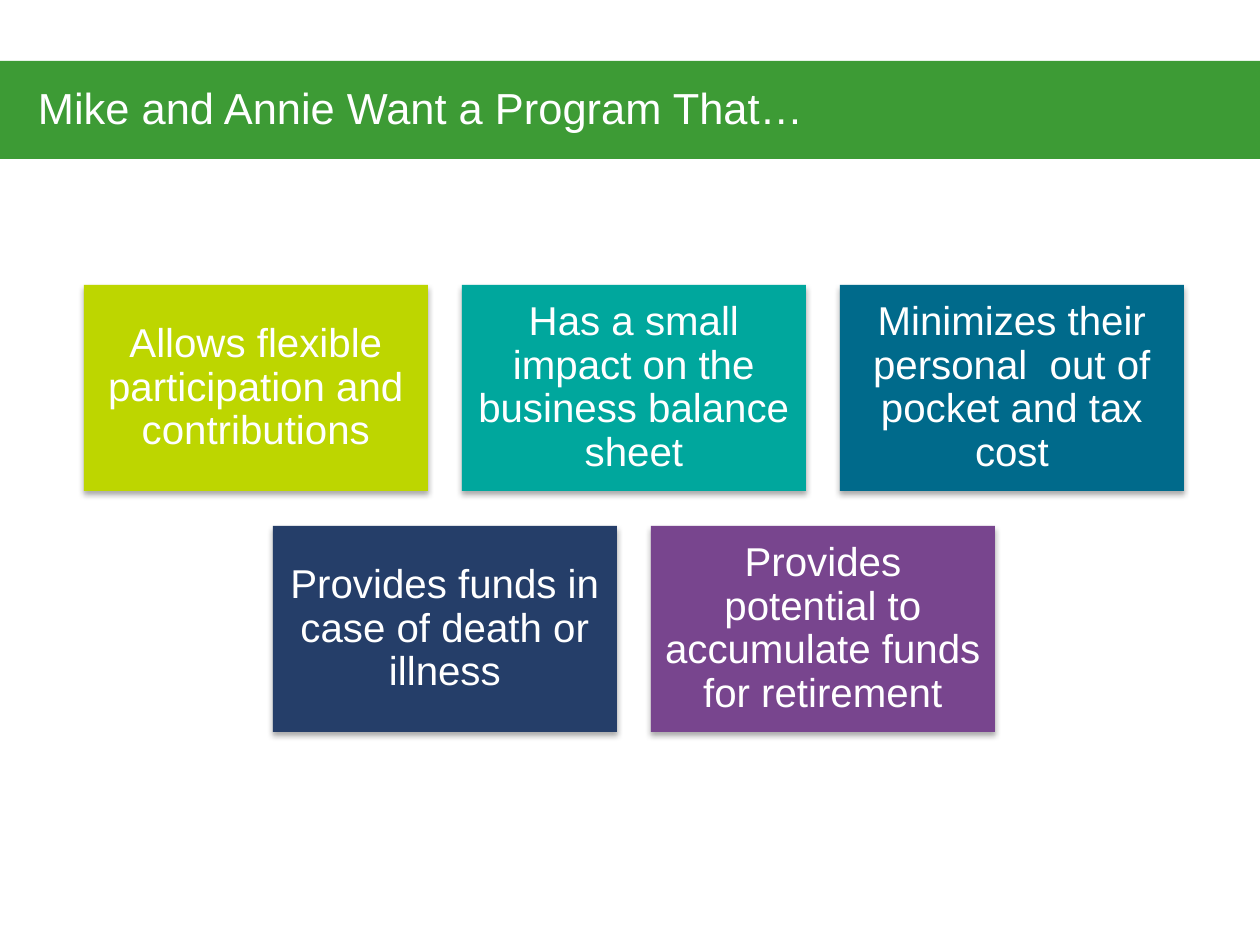
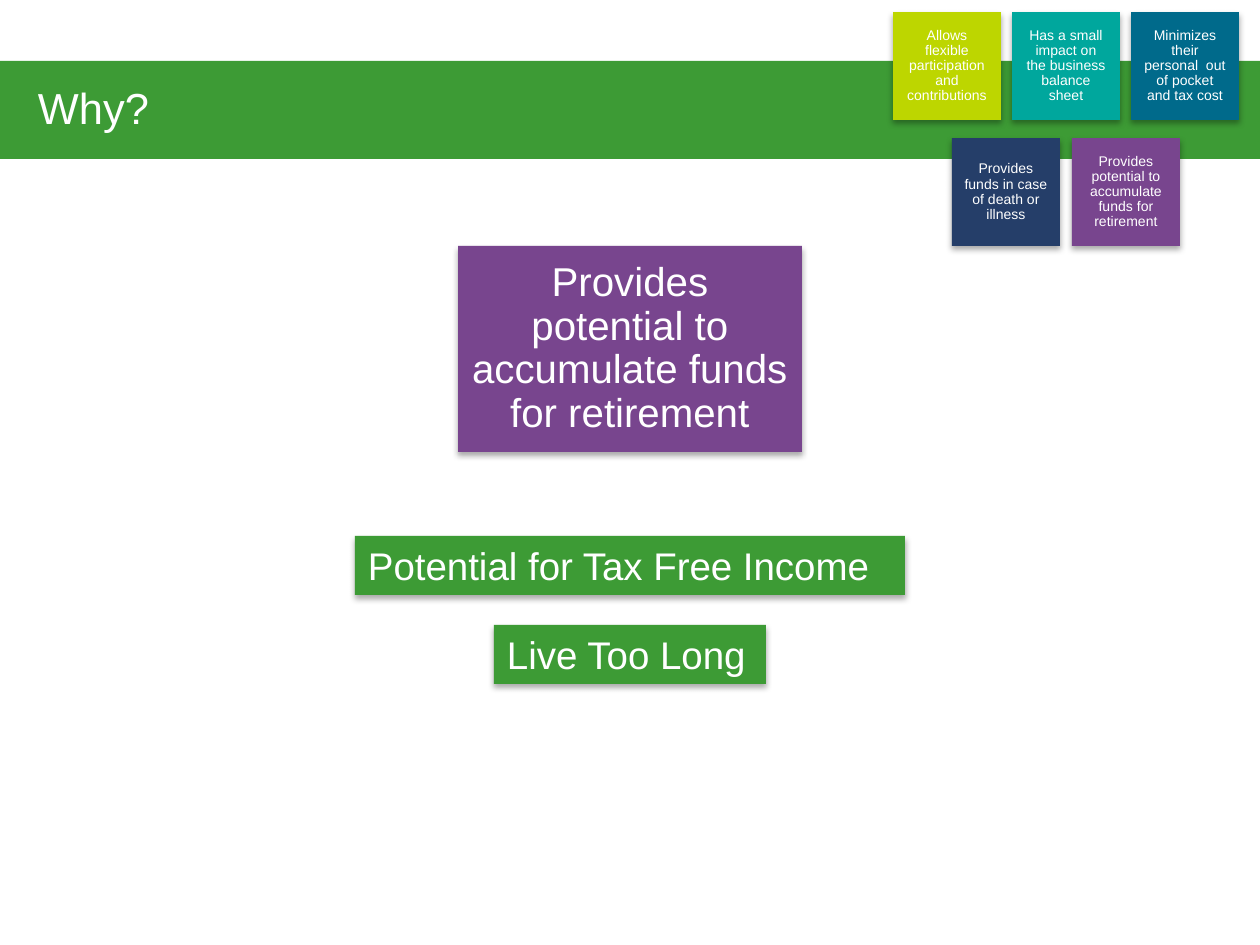
"""Build two slides on what Mike and Annie want from a program."""
from typing import Any, NamedTuple

from lxml.etree import SubElement
from pptx import Presentation
from pptx.dml.color import RGBColor
from pptx.enum.shapes import MSO_SHAPE
from pptx.enum.text import MSO_ANCHOR, PP_ALIGN
from pptx.oxml.ns import qn
from pptx.slide import Slide
from pptx.util import Emu, Pt

SCALE = 914400 / 126
WIDTH, HEIGHT = 1260, 945
FONT = "Arial"
WHITE, GREEN, BLACK = "FFFFFF", "3D9B35", "000000"


class Box(NamedTuple):
    left: int
    top: int
    width: int
    height: int


class Style(NamedTuple):
    size: float
    align: PP_ALIGN
    anchor: MSO_ANCHOR
    inset: tuple[int, int]
    line: float
    shadow: bool


class Card(NamedTuple):
    text: str
    fill: str


class Grid(NamedTuple):
    first: Box
    across: int
    down: int
    style: Style


TITLE = Style(24.8, PP_ALIGN.LEFT, MSO_ANCHOR.BOTTOM, (38, 25), 0.9, False)
LARGE = Style(23, PP_ALIGN.CENTER, MSO_ANCHOR.MIDDLE, (12, 12), 0.9, True)
SMALL = LARGE._replace(size=8)
LABEL = Style(22, PP_ALIGN.LEFT, MSO_ANCHOR.TOP, (13, 6), 1.0, True)

CARDS = [
    Card("Allows flexible participation and contributions", "BDD600"),
    Card("Has a small impact on the business balance sheet", "00A79D"),
    Card("Minimizes their personal  out of pocket and tax cost", "006A8B"),
    Card("Provides funds in case of death or illness", "253E69"),
    Card("Provides potential to accumulate funds for retirement", "78458E"),
]
COLS = 3
WANTS = Grid(Box(84, 285, 344, 206), 378, 241, LARGE)
RECAP = Grid(Box(893, 12, 108, 108), 119, 126, SMALL)
LABELS = {
    "Potential for Tax Free Income": Box(355, 536, 550, 59),
    "Live Too Long": Box(494, 625, 272, 59),
}


def px(value: float) -> Emu:
    """Turn pixels into EMU."""
    return Emu(round(value * SCALE))


def color(code: str) -> RGBColor:
    """Turn a hex string into a colour."""
    return RGBColor.from_string(code)


def shade(shape: Any) -> None:
    """Drop a soft shadow below the shape."""
    effects = shape._element.spPr.find(qn("a:effectLst"))
    outer = SubElement(effects, qn("a:outerShdw"), blurRad=str(Pt(3.5)),
                       dist=str(Pt(2.2)), dir="5400000", rotWithShape="0")
    tint = SubElement(outer, qn("a:srgbClr"), val=BLACK)
    SubElement(tint, qn("a:alpha"), val="32000")


def block(shapes: Any, box: Box, card: Card, style: Style) -> None:
    """Draw a filled rectangle with its text."""
    shape = shapes.add_shape(MSO_SHAPE.RECTANGLE, *map(px, box))
    shape.fill.solid()
    shape.fill.fore_color.rgb = color(card.fill)
    shape.line.fill.background()
    shape.shadow.inherit = False
    if style.shadow:
        shade(shape)
    frame = shape.text_frame
    frame.text = card.text
    frame.word_wrap = True
    frame.vertical_anchor = style.anchor
    side, edge = map(px, style.inset)
    frame.margin_left = frame.margin_right = side
    frame.margin_top = frame.margin_bottom = edge
    para = frame.paragraphs[0]
    para.alignment = style.align
    para.line_spacing = style.line
    font = para.runs[0].font
    font.name, font.size = FONT, Pt(style.size)
    font.color.rgb = color(WHITE)


def layout(shapes: Any, grid: Grid) -> None:
    """Draw the cards in rows, with the short row centred."""
    for index, card in enumerate(CARDS):
        row, col = divmod(index, COLS)
        count = min(COLS, len(CARDS) - row * COLS)
        shift = (COLS - count) / 2 + col
        box = grid.first._replace(
            left=round(grid.first.left + shift * grid.across),
            top=grid.first.top + row * grid.down)
        block(shapes, box, card, grid.style)


def start(deck: Any, title: str) -> Slide:
    """Add a blank slide with the title band."""
    slide = deck.slides.add_slide(deck.slide_layouts[6])
    block(slide.shapes, Box(0, 61, WIDTH, 98), Card(title, GREEN), TITLE)
    return slide


def main() -> None:
    """Build and save the deck."""
    deck = Presentation()
    deck.slide_width, deck.slide_height = px(WIDTH), px(HEIGHT)

    wants = start(deck, "Mike and Annie Want a Program That…")
    layout(wants.shapes, WANTS)

    why = start(deck, "Why?")
    block(why.shapes, Box(458, 246, 344, 206), CARDS[-1], LARGE)
    layout(why.shapes.add_group_shape().shapes, RECAP)
    for text, box in LABELS.items():
        block(why.shapes, box, Card(text, GREEN), LABEL)

    deck.save("out.pptx")


if __name__ == "__main__":
    main()
